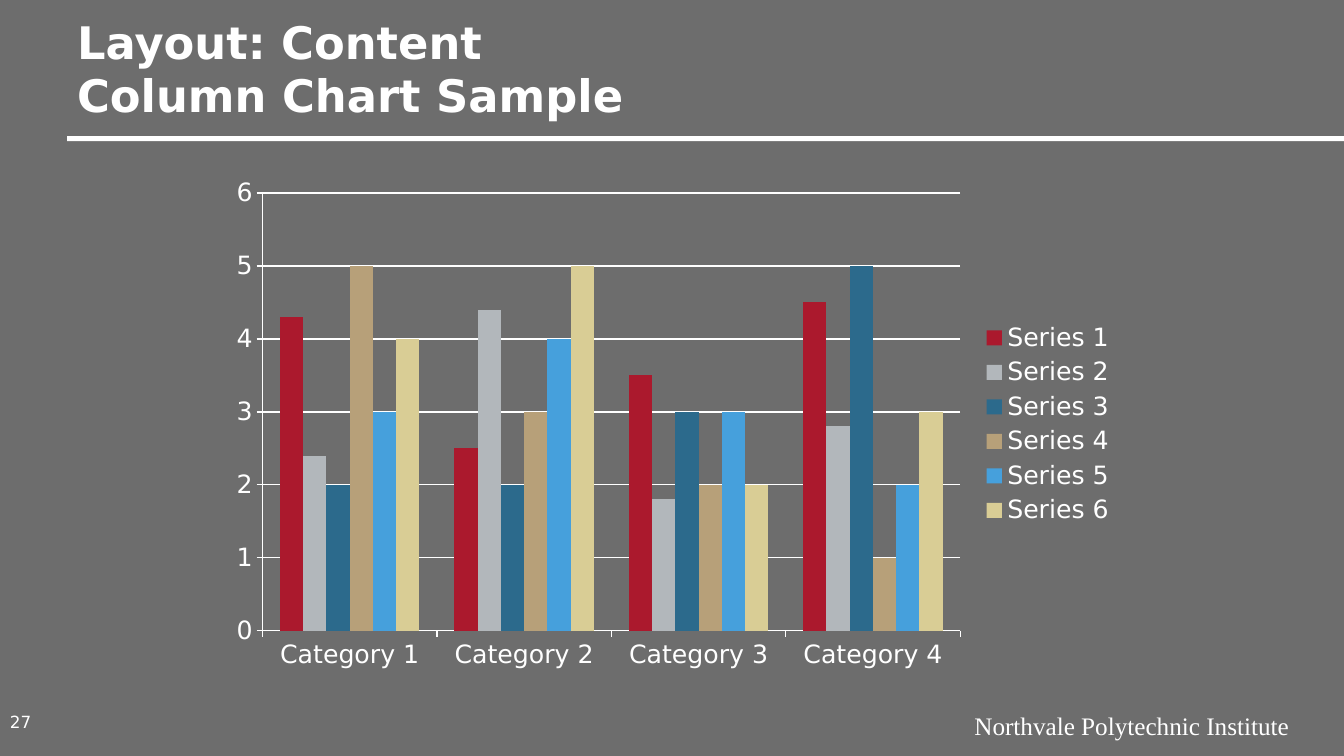
from dataclasses import dataclass

from pptx import Presentation
from pptx.chart.axis import _BaseAxis as Axis
from pptx.chart.data import CategoryChartData
from pptx.dml.color import RGBColor
from pptx.enum.chart import XL_CHART_TYPE as ChartType
from pptx.enum.chart import XL_LEGEND_POSITION as LegendPosition
from pptx.enum.chart import XL_TICK_MARK as TickMark
from pptx.enum.shapes import MSO_SHAPE as ShapeKind
from pptx.enum.text import MSO_ANCHOR as Anchor
from pptx.enum.text import PP_ALIGN as Align
from pptx.slide import Slide
from pptx.util import Pt

WHITE = RGBColor(0xFF, 0xFF, 0xFF)
GRAY = RGBColor(0x6D, 0x6D, 0x6D)
CRIMSON = RGBColor(0xAB, 0x19, 0x2D)
SILVER = RGBColor(0xB2, 0xB7, 0xBB)
TEAL = RGBColor(0x2C, 0x6A, 0x8C)
TAN = RGBColor(0xB7, 0xA0, 0x79)
SKY = RGBColor(0x46, 0xA0, 0xDC)
SAND = RGBColor(0xD9, 0xCD, 0x95)

SANS = "DejaVu Sans"
SERIF = "Times New Roman"


@dataclass(frozen=True)
class Box:
    left: float
    top: float
    width: float
    height: float

    def lengths(self) -> tuple[Pt, Pt, Pt, Pt]:
        return Pt(self.left), Pt(self.top), Pt(self.width), Pt(self.height)


@dataclass(frozen=True)
class Label:
    text: str
    box: Box
    size: float
    font: str = SANS
    bold: bool = False
    align: Align = Align.LEFT
    anchor: Anchor = Anchor.TOP


@dataclass(frozen=True)
class Series:
    color: RGBColor
    values: tuple[float, ...]


RULE_BOX = Box(48, 97.2, 912, 3.6)
CHART_BOX = Box(156, 120, 648, 366)

LABELS = (
    Label("Northvale Polytechnic Institute", Box(576, 504, 352, 28.8), 18,
          font=SERIF, align=Align.RIGHT),
    Label("Layout: Content\vColumn Chart Sample", Box(48, 27.2, 864, 63.4), 32,
          bold=True, anchor=Anchor.BOTTOM),
    Label("27", Box(0, 503.3, 48, 24.5), 12, anchor=Anchor.MIDDLE),
)

SERIES = (
    Series(CRIMSON, (4.3, 2.5, 3.5, 4.5)),
    Series(SILVER, (2.4, 4.4, 1.8, 2.8)),
    Series(TEAL, (2, 2, 3, 5)),
    Series(TAN, (5, 3, 2, 1)),
    Series(SKY, (3, 4, 3, 2)),
    Series(SAND, (4, 5, 2, 3)),
)


def set_attributes(target: object, values: dict[str, object]) -> None:
    for name, value in values.items():
        setattr(target, name, value)


def add_rule(slide: Slide, box: Box) -> None:
    shape = slide.shapes.add_shape(ShapeKind.RECTANGLE, *box.lengths())
    shape.shadow.inherit = False
    shape.fill.solid()
    shape.fill.fore_color.rgb = WHITE
    shape.line.fill.background()


def add_label(slide: Slide, label: Label) -> None:
    frame = slide.shapes.add_textbox(*label.box.lengths()).text_frame
    set_attributes(frame, {"word_wrap": True, "vertical_anchor": label.anchor})
    paragraph = frame.paragraphs[0]
    paragraph.text = label.text
    paragraph.alignment = label.align
    for run in paragraph.runs:
        set_attributes(run.font, {"name": label.font, "size": Pt(label.size),
                                  "bold": label.bold})
        run.font.color.rgb = WHITE


def style_axis(axis: Axis, gridlines: bool) -> None:
    set_attributes(axis, {
        "major_tick_mark": TickMark.OUTSIDE,
        "minor_tick_mark": TickMark.NONE,
        "has_major_gridlines": gridlines,
    })
    lines = [axis.format.line]
    if gridlines:
        lines.append(axis.major_gridlines.format.line)
    for line in lines:
        line.color.rgb = WHITE
        line.width = Pt(1)


def add_column_chart(slide: Slide, box: Box, series_list: tuple[Series, ...]) -> None:
    data = CategoryChartData()
    data.categories = [f"Category {number}" for number in range(1, 5)]
    for number, series in enumerate(series_list, start=1):
        data.add_series(f"Series {number}", series.values)

    chart = slide.shapes.add_chart(
        ChartType.COLUMN_CLUSTERED, *box.lengths(), data).chart
    set_attributes(chart, {"has_title": False, "has_legend": True})
    set_attributes(chart.font, {"name": SANS, "size": Pt(18)})
    chart.font.color.rgb = WHITE
    set_attributes(chart.legend, {"position": LegendPosition.RIGHT,
                                  "include_in_layout": False})

    style_axis(chart.category_axis, gridlines=False)
    style_axis(chart.value_axis, gridlines=True)
    set_attributes(chart.value_axis, {"minimum_scale": 0, "maximum_scale": 6,
                                      "major_unit": 1})

    plot = chart.plots[0]
    set_attributes(plot, {"gap_width": 150, "overlap": 0,
                          "vary_by_categories": False})
    for column, series in zip(plot.series, series_list):
        column.format.fill.solid()
        column.format.fill.fore_color.rgb = series.color


def main() -> None:
    presentation = Presentation()
    set_attributes(presentation, {"slide_width": Pt(960), "slide_height": Pt(540)})
    slide = presentation.slides.add_slide(presentation.slide_layouts[6])
    slide.background.fill.solid()
    slide.background.fill.fore_color.rgb = GRAY

    add_rule(slide, RULE_BOX)
    for label in LABELS:
        add_label(slide, label)
    add_column_chart(slide, CHART_BOX, SERIES)
    presentation.save("out.pptx")


if __name__ == "__main__":
    main()
